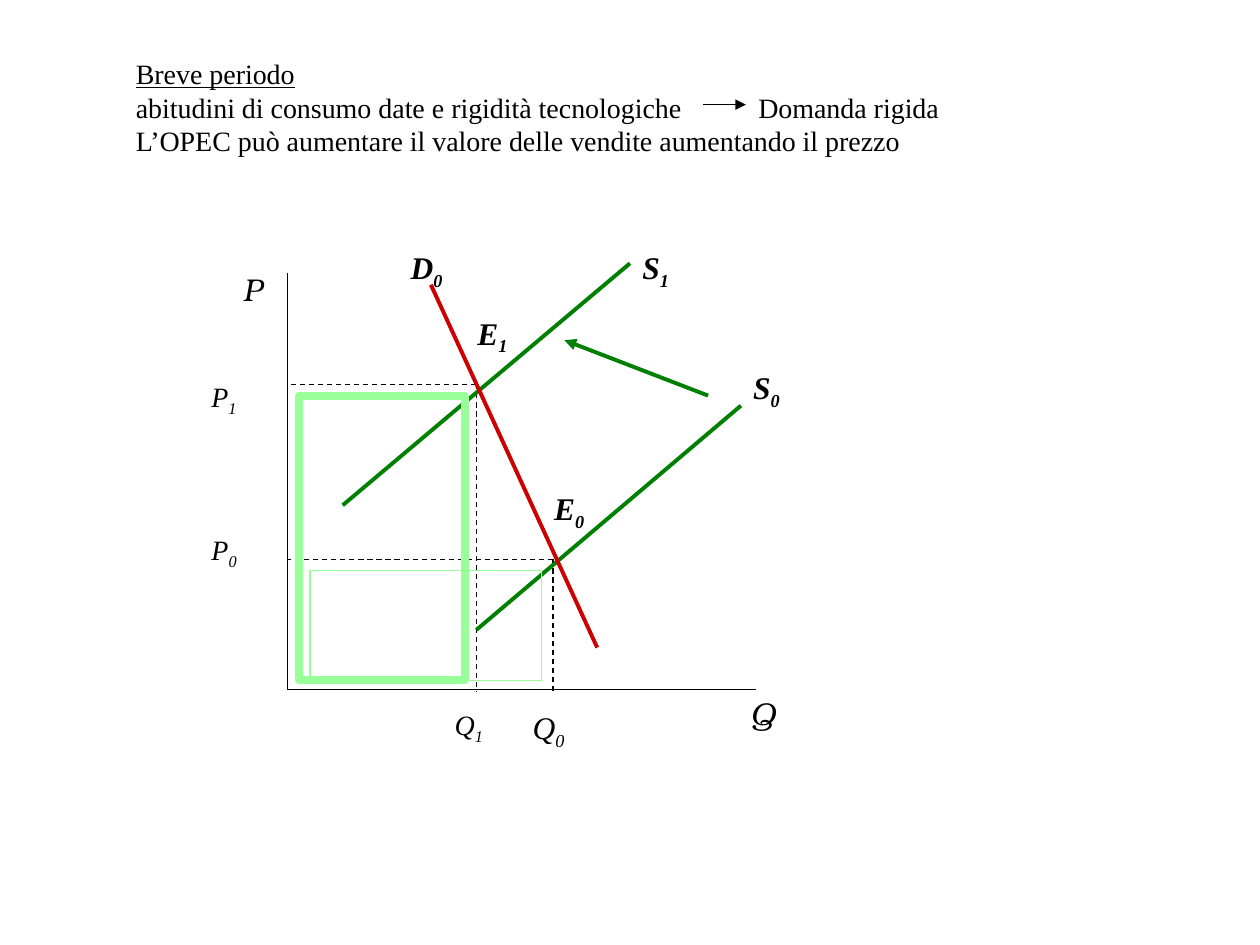
from lxml.etree import SubElement
from pptx import Presentation
from pptx.dml.color import RGBColor
from pptx.enum.dml import MSO_LINE
from pptx.enum.shapes import MSO_CONNECTOR, MSO_SHAPE
from pptx.oxml.ns import qn
from pptx.util import Inches, Pt

COLORS = {"ink": "000000", "supply": "008000", "demand": "CC0000", "revenue": "99FF99"}
SERIF = "Times New Roman"
AXIS_FONT = "TeX Gyre Bonum"

# Key places of the diagram, in inches
ORIGIN_X, ORIGIN_Y = 2.28, 5.47
Q1, Q0 = 3.78, 4.39
P1, P0 = 3.05, 4.44
DROP_END = 5.49


def color(name):
    return RGBColor.from_string(COLORS[name])


def add_line(slide, start, end, stroke="ink", width=0.75, dashed=False, arrow=False):
    points = [Inches(value) for value in (*start, *end)]
    line = slide.shapes.add_connector(MSO_CONNECTOR.STRAIGHT, *points)
    line.line.color.rgb = color(stroke)
    line.line.width = Pt(width)
    if dashed:
        line.line.dash_style = MSO_LINE.DASH
    if arrow:
        SubElement(line.line._get_or_add_ln(), qn("a:tailEnd"), type="triangle")
    SubElement(line._element.spPr, qn("a:effectLst"))


def add_text_frame(slide, left, top, width, height):
    box = slide.shapes.add_textbox(*map(Inches, (left, top, width, height)))
    box.text_frame.word_wrap = True
    return box.text_frame


def format_font(paragraph, size, face=SERIF):
    paragraph.font.size = Pt(size)
    paragraph.font.name = face
    paragraph.font.color.rgb = color("ink")


def add_label(slide, letter, subscript, box, size=18, bold=False, face=SERIF):
    paragraph = add_text_frame(slide, *box).paragraphs[0]
    format_font(paragraph, size, face)
    paragraph.font.italic = True
    paragraph.font.bold = bold
    paragraph.add_run().text = letter
    if subscript:
        index = paragraph.add_run()
        index.text = subscript
        index._r.get_or_add_rPr().set("baseline", "-25000")


def add_revenue_area(slide, left, top, width, height, stroke_width):
    area = slide.shapes.add_shape(
        MSO_SHAPE.RECTANGLE, *map(Inches, (left, top, width, height)))
    area.shadow.inherit = False
    area.fill.background()
    area.line.color.rgb = color("revenue")
    area.line.width = Pt(stroke_width)


def add_explanation(slide):
    frame = add_text_frame(slide, 0.98, 0.4, 6.93, 0.9)
    frame.text = ("Breve periodo\n"
                  "abitudini di consumo date e rigidità tecnologiche\tDomanda rigida\n"
                  "L’OPEC può aumentare il valore delle vendite aumentando il prezzo")
    for paragraph in frame.paragraphs:
        format_font(paragraph, 16)
    heading, demand = frame.paragraphs[:2]
    heading.font.underline = True
    # Tab stop leaves room for the arrow
    tabs = SubElement(demand._p.get_or_add_pPr(), qn("a:tabLst"))
    SubElement(tabs, qn("a:tab"), pos=str(Inches(4.94)), algn="l")
    demand_properties = demand._p.pPr
    demand_properties.insert(0, tabs)  # the tab list precedes the default font
    add_line(slide, (5.58, 0.83), (5.92, 0.83), arrow=True)


def add_diagram(slide):
    # Axes
    add_line(slide, (ORIGIN_X, 2.17), (ORIGIN_X, ORIGIN_Y))
    add_line(slide, (ORIGIN_X, ORIGIN_Y), (6, ORIGIN_Y))

    # Guides from each equilibrium to the axes
    for quantity, price in ((Q0, P0), (Q1, P1)):
        add_line(slide, (quantity, price), (ORIGIN_X, price), dashed=True)
        add_line(slide, (quantity, price), (quantity, DROP_END), dashed=True)

    # Supply and demand curves
    add_line(slide, (3.78, 5), (5.88, 3.22), "supply", 2.25)
    add_line(slide, (2.72, 4.01), (5, 2.09), "supply", 2.25)
    add_line(slide, (3.42, 2.26), (4.74, 5.14), "demand", 2.25)

    # Axis names
    add_label(slide, "P", "", (1.83, 2.09, 0.46, 0.4), face=AXIS_FONT)
    add_label(slide, "Q", "", (5.86, 5.46, 0.46, 0.4), face=AXIS_FONT)

    # Prices and quantities
    add_label(slide, "P", "0", (1.58, 4.18, 0.58, 0.37), size=16)
    add_label(slide, "P", "1", (1.58, 2.96, 0.43, 0.37), size=16)
    add_label(slide, "Q", "0", (4.13, 5.57, 0.6, 0.4))
    add_label(slide, "Q", "1", (3.51, 5.57, 0.53, 0.37), size=16)

    # Curves and equilibria
    for letter, subscript, box in (
        ("S", "0", (5.88, 2.87, 0.54, 0.4)),
        ("S", "1", (5, 1.92, 0.7, 0.4)),
        ("D", "0", (3.16, 1.92, 0.55, 0.4)),
        ("E", "0", (4.3, 3.83, 0.53, 0.4)),
        ("E", "1", (3.69, 2.44, 0.61, 0.4)),
    ):
        add_label(slide, letter, subscript, box, bold=True)

    # Shift of supply, and sales value after and before it
    add_line(slide, (5.62, 3.14), (4.48, 2.7), "supply", 2.25, arrow=True)
    add_revenue_area(slide, 2.37, 3.14, 1.32, 2.26, 4.5)
    add_revenue_area(slide, 2.46, 4.53, 1.84, 0.87, 0.75)


def main():
    presentation = Presentation()
    presentation.slide_width = Inches(10)
    presentation.slide_height = Inches(7.5)
    slide = presentation.slides.add_slide(presentation.slide_layouts[6])
    add_explanation(slide)
    add_diagram(slide)
    presentation.save("out.pptx")


if __name__ == "__main__":
    main()
